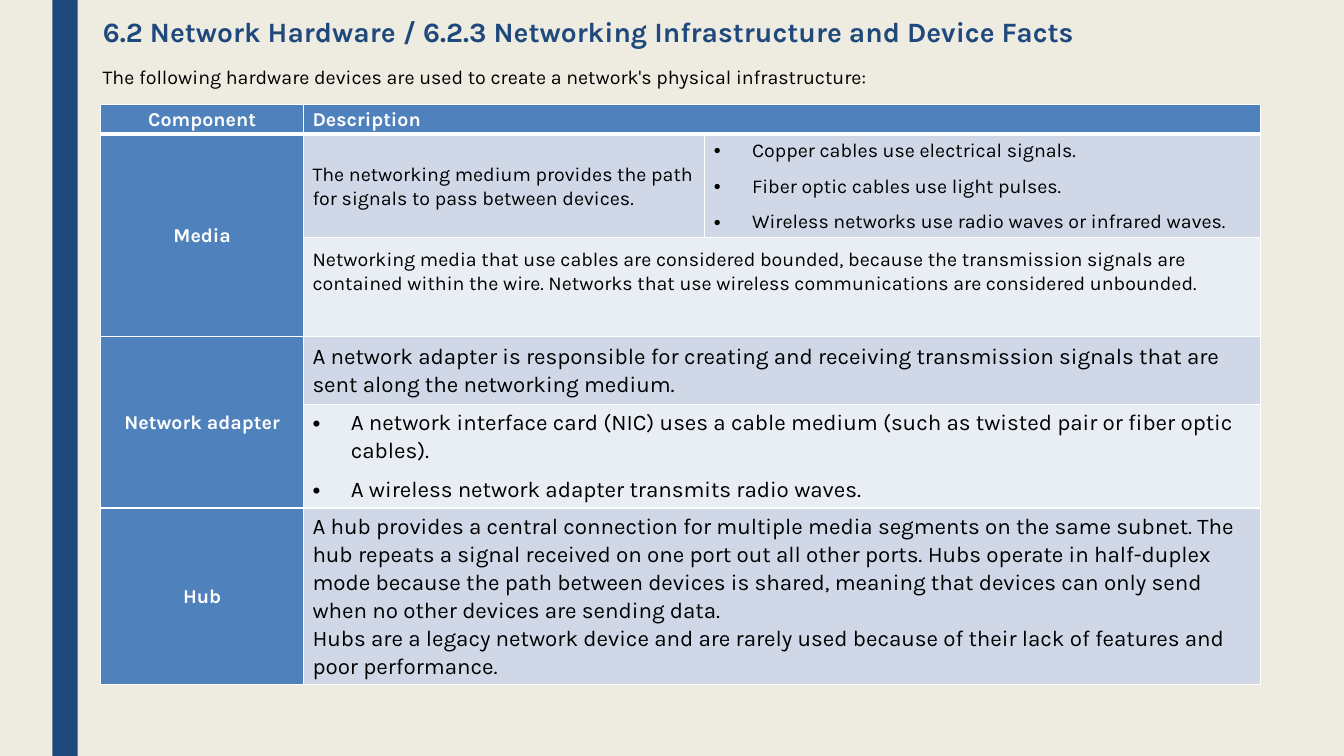
from dataclasses import dataclass

import pptx
import pptx.dml.color
import pptx.enum.shapes
import pptx.enum.text
import pptx.oxml
import pptx.oxml.ns
import pptx.util
from pptx.util import Inches

ALIGN = pptx.enum.text.PP_ALIGN
ANCHOR = pptx.enum.text.MSO_ANCHOR
FONT = "Karla"
NAVY, BLUE, PALE, PALER = "1F497D", "4F81BD", "D0D8E8", "E9EDF4"
WHITE, BLACK, CREAM = "FFFFFF", "000000", "EEECE1"

COLUMN_WIDTHS = [2.01, 3.98, 5.51]
ROW_HEIGHTS = [0.29, 1.03, 0.98, 0.67, 1.03, 1.75]


@dataclass
class TableEntry:
    row: int
    column: int
    lines: list[str]
    fill: str
    rows: int = 1
    columns: int = 1
    size: int = 14
    heading: bool = False
    bullets: bool = False
    space_before: float = 0
    space_after: float = 0
    anchor: ANCHOR = ANCHOR.MIDDLE
    margin: float = 0.04


def heading(row: int, column: int, text: str, **options) -> TableEntry:
    return TableEntry(row, column, [text], BLUE, heading=True, margin=0.02, **options)


ENTRIES = [
    heading(0, 0, "Component", space_before=3.8, space_after=3.8),
    heading(0, 1, "Description", columns=2, space_before=3.8, space_after=3.8),
    heading(1, 0, "Media", rows=2, space_before=3.8, space_after=3.8),
    TableEntry(1, 1, ["The networking medium provides the path for signals to pass between devices."],
               PALE, space_before=3.8, space_after=3.8),
    TableEntry(1, 2, ["Copper cables use electrical signals.",
                      "Fiber optic cables use light pulses.",
                      "Wireless networks use radio waves or infrared waves."],
               PALE, bullets=True, space_after=8),
    TableEntry(2, 1, ["Networking media that use cables are considered bounded, because the transmission "
                      "signals are contained within the wire. Networks that use wireless communications "
                      "are considered unbounded."],
               PALER, columns=2, space_after=6, anchor=ANCHOR.TOP, margin=0.09),
    heading(3, 0, "Network adapter", rows=2),
    TableEntry(3, 1, ["A network adapter is responsible for creating and receiving transmission signals "
                      "that are sent along the networking medium."],
               PALE, columns=2, size=16),
    TableEntry(4, 1, ["A network interface card (NIC) uses a cable medium (such as twisted pair or "
                      "fiber optic cables).",
                      "A wireless network adapter transmits radio waves."],
               PALER, columns=2, size=16, bullets=True, space_after=8),
    heading(5, 0, "Hub"),
    TableEntry(5, 1, ["A hub provides a central connection for multiple media segments on the same subnet. "
                      "The hub repeats a signal received on one port out all other ports. Hubs operate in "
                      "half-duplex mode because the path between devices is shared, meaning that devices "
                      "can only send when no other devices are sending data.",
                      "Hubs are a legacy network device and are rarely used because of their lack of "
                      "features and poor performance."],
               PALE, columns=2, size=16),
]


def color(value: str) -> pptx.dml.color.RGBColor:
    return pptx.dml.color.RGBColor.from_string(value)


def paint(target, value: str) -> None:
    target.fill.solid()
    target.fill.fore_color.rgb = color(value)


def set_font(paragraph, size: float, value: str, bold: bool = False) -> None:
    font = paragraph.font
    font.name, font.size, font.bold = FONT, pptx.util.Pt(size), bold
    font.color.rgb = color(value)


def add_bullet(paragraph) -> None:
    properties = paragraph._p.get_or_add_pPr()
    indent = Inches(0.38)
    properties.set("marL", str(indent))
    properties.set("indent", str(-indent))
    namespace = pptx.oxml.ns.nsdecls("a")
    properties.append(pptx.oxml.parse_xml(f'<a:buFont {namespace} typeface="Arial"/>'))
    properties.append(pptx.oxml.parse_xml(f'<a:buChar {namespace} char="•"/>'))


def set_borders(cell, row: int) -> None:
    properties = cell._tc.get_or_add_tcPr()
    widths = {"lnL": 1, "lnR": 1, "lnT": 3 if row == 1 else 1, "lnB": 3 if row == 0 else 1}
    for position, (side, width) in enumerate(widths.items()):
        properties.insert(position, pptx.oxml.parse_xml(
            f'<a:{side} {pptx.oxml.ns.nsdecls("a")} w="{pptx.util.Pt(width)}">'
            f'<a:solidFill><a:srgbClr val="{WHITE}"/></a:solidFill></a:{side}>'))


def fill_entry(table, entry: TableEntry) -> None:
    cell = table.cell(entry.row, entry.column)
    last_row = entry.row + entry.rows - 1
    last_column = entry.column + entry.columns - 1
    if (last_row, last_column) != (entry.row, entry.column):
        cell.merge(table.cell(last_row, last_column))
    for row in range(entry.row, last_row + 1):
        for column in range(entry.column, last_column + 1):
            part = table.cell(row, column)
            paint(part, entry.fill)
            set_borders(part, row)
    cell.vertical_anchor = entry.anchor
    cell.margin_left = cell.margin_right = Inches(0.09)
    cell.margin_top = cell.margin_bottom = Inches(entry.margin)
    cell.text_frame.text = "\n".join(entry.lines)
    for paragraph in cell.text_frame.paragraphs:
        paragraph.alignment = ALIGN.CENTER if entry.heading and entry.column == 0 else ALIGN.LEFT
        paragraph.line_spacing = 1.07
        paragraph.space_before = pptx.util.Pt(entry.space_before)
        paragraph.space_after = pptx.util.Pt(entry.space_after)
        if entry.bullets:
            add_bullet(paragraph)
        set_font(paragraph, entry.size, WHITE if entry.heading else BLACK, entry.heading)


def add_component_table(slide) -> None:
    frame = slide.shapes.add_table(len(ROW_HEIGHTS), len(COLUMN_WIDTHS), Inches(1), Inches(1.04),
                                   Inches(sum(COLUMN_WIDTHS)), Inches(sum(ROW_HEIGHTS)))
    table = frame.table
    table.first_row = table.horz_banding = False
    for column, width in zip(table.columns, COLUMN_WIDTHS):
        column.width = Inches(width)
    for row, height in zip(table.rows, ROW_HEIGHTS):
        row.height = Inches(height)
    for entry in ENTRIES:
        fill_entry(table, entry)


def main() -> None:
    presentation = pptx.Presentation()
    presentation.slide_width, presentation.slide_height = Inches(13.33), Inches(7.5)
    slide = presentation.slides.add_slide(presentation.slide_layouts[5])
    paint(slide.background, CREAM)

    # Side bar
    bar = slide.shapes.add_shape(pptx.enum.shapes.MSO_SHAPE.RECTANGLE,
                                 Inches(0.52), 0, Inches(0.25), Inches(7.5))
    bar.shadow.inherit = False
    paint(bar, NAVY)
    bar.line.fill.background()

    # Title
    title = slide.shapes.title
    title.left, title.top, title.width, title.height = map(Inches, (0.92, 0.13, 11.5, 0.78))
    title.text_frame.text = "6.2 Network Hardware / 6.2.3 Networking Infrastructure and Device Facts"
    title.text_frame.auto_size = pptx.enum.text.MSO_AUTO_SIZE.NONE
    title.text_frame.vertical_anchor = ANCHOR.TOP
    paragraph = title.text_frame.paragraphs[0]
    paragraph.alignment, paragraph.line_spacing = ALIGN.LEFT, 0.89
    set_font(paragraph, 20, NAVY, bold=True)

    # Table of components
    add_component_table(slide)

    # Introduction
    introduction = slide.shapes.add_textbox(*map(Inches, (0.92, 0.59, 11.5, 0.64)))
    introduction.text_frame.word_wrap = True
    introduction.text_frame.text = ("The following hardware devices are used to create "
                                    "a network's physical infrastructure:")
    set_font(introduction.text_frame.paragraphs[0], 14, BLACK)

    presentation.save("out.pptx")


if __name__ == "__main__":
    main()
